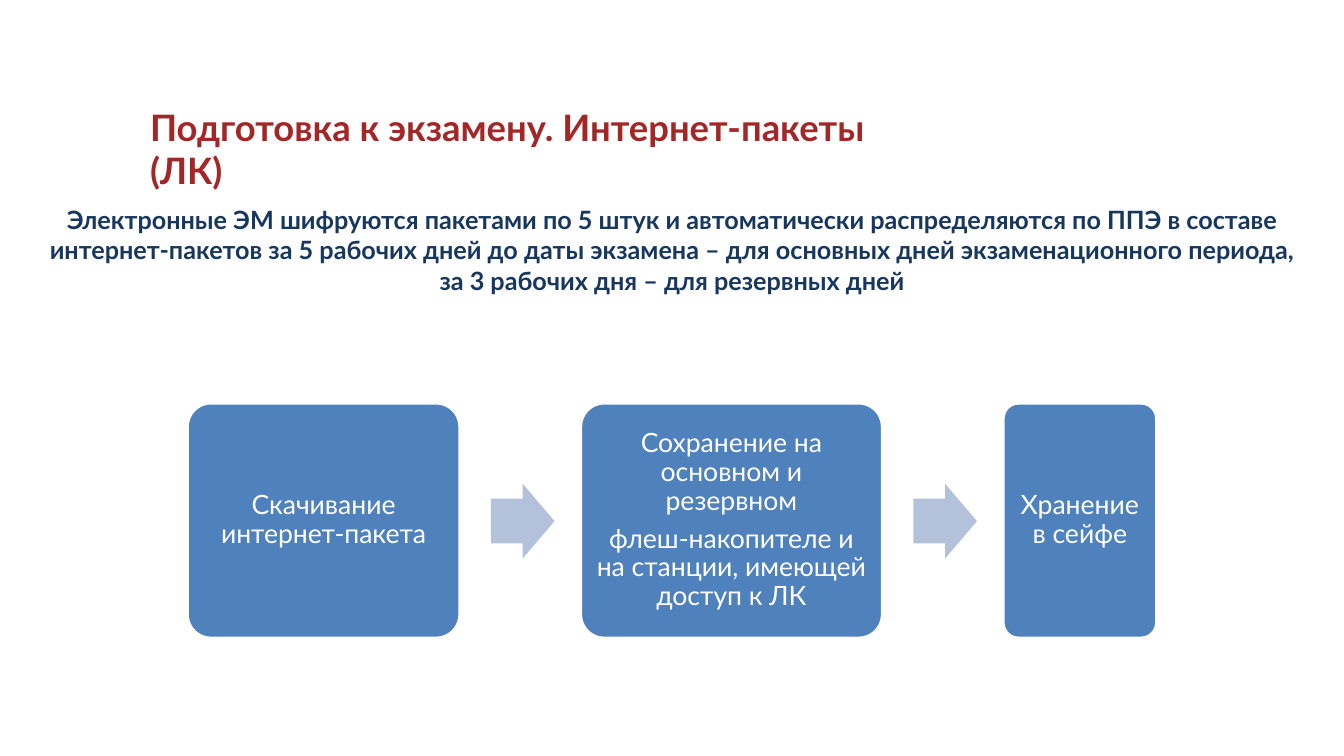
from pptx import Presentation
from pptx import util as u
from pptx.dml import color
from pptx.enum import shapes, text

COLORS = {"title": "A42727", "note": "17375E", "step": "4F81BD",
          "arrow": "B3C1DB", "white": "FFFFFF"}


def write(frame, content, size, tint, bold=False, align=text.PP_ALIGN.LEFT,
          spacing=None, after=None, font="Lato"):
    """Fill a text frame with one or more formatted paragraphs."""
    frame.word_wrap = True
    for index, words in enumerate(content):
        para = frame.add_paragraph() if index else frame.paragraphs[0]
        para.text = words
        para.alignment = align
        if spacing:
            para.line_spacing = spacing
        if after:
            para.space_after = u.Pt(after)
        for span in para.runs:
            span.font.name = font
            span.font.size = u.Pt(size)
            span.font.bold = bold
            span.font.color.rgb = color.RGBColor.from_string(COLORS[tint])


class Page:
    """Hold the slide and its style, with a method for each kind of element."""

    def __init__(self, deck):
        self.slide = deck.slides.add_slide(deck.slide_layouts[6])

    def label(self, area, words, **style):
        """Add a text box."""
        box = self.slide.shapes.add_textbox(*map(u.Inches, area))
        write(box.text_frame, [words], **style)
        box.text_frame.auto_size = text.MSO_AUTO_SIZE.SHAPE_TO_FIT_TEXT

    def shape(self, kind, area, fill, adjustments):
        """Add a filled shape without outline or shadow."""
        shape = self.slide.shapes.add_shape(kind, *map(u.Inches, area))
        shape.shadow.inherit = False
        shape.fill.solid()
        shape.fill.fore_color.rgb = color.RGBColor.from_string(COLORS[fill])
        shape.line.fill.background()
        for index, value in enumerate(adjustments):
            shape.adjustments[index] = value
        return shape

    def step(self, area, content):
        """Add a rounded box with its text."""
        box = self.shape(shapes.MSO_SHAPE.ROUNDED_RECTANGLE, area, "step", [0.1])
        box.line.color.rgb = color.RGBColor.from_string(COLORS["white"])
        box.line.width = u.Pt(2)
        frame = box.text_frame
        frame.margin_left = frame.margin_right = u.Inches(0.08)
        frame.margin_top = frame.margin_bottom = u.Inches(0.08)
        frame.vertical_anchor = text.MSO_ANCHOR.MIDDLE
        write(frame, content, size=19, tint="white",
              align=text.PP_ALIGN.CENTER, spacing=0.9, after=6.65)

    def arrow(self, area):
        """Add an arrow between two steps."""
        self.shape(shapes.MSO_SHAPE.RIGHT_ARROW, area, "arrow", [0.6, 0.5])


def main():
    """Build the slide and save it."""
    deck = Presentation()
    deck.slide_width = u.Inches(13.33)
    deck.slide_height = u.Inches(7.5)
    page = Page(deck)
    page.label((1.39, 0.99, 8.02, 0.54),
               "Подготовка к экзамену. Интернет-пакеты (ЛК)",
               size=26, tint="title", bold=True)
    page.label((0.32, 1.98, 12.69, 1.01),
               "Электронные ЭМ шифруются пакетами по 5 штук и автоматически "
               "распределяются по ППЭ в составе интернет-пакетов за 5 рабочих "
               "дней до даты экзамена – для основных дней экзаменационного "
               "периода, за 3 рабочих дня – для резервных дней",
               size=18, tint="note", bold=True, align=text.PP_ALIGN.CENTER)

    steps = [
        (2.7, ["Скачивание\nинтернет-пакета"]),
        (2.99, ["Сохранение на основном и резервном",
                "флеш-накопителе и на станции, имеющей доступ к ЛК"]),
        (1.52, ["Хранение в сейфе"]),
    ]
    left, top, height, gap = 1.86, 4, 2.33, 1.2
    for index, (width, content) in enumerate(steps):
        if index:
            page.arrow((left - gap + 0.31, 4.8, 0.63, 0.74))
        page.step((left, top, width, height), content)
        left += width + gap

    deck.save("out.pptx")


if __name__ == "__main__":
    main()
